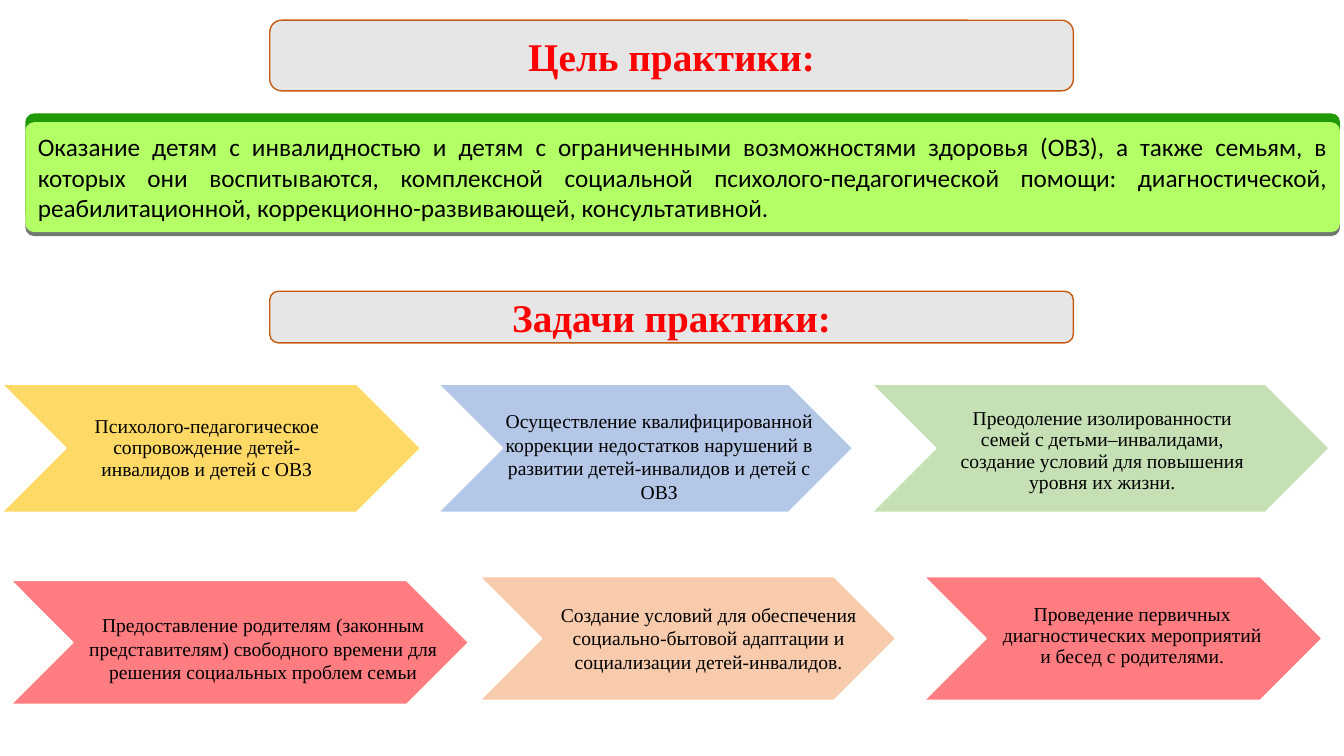
from pptx import Presentation
from pptx.dml.color import RGBColor
from pptx.enum.shapes import MSO_SHAPE as Shape
from pptx.enum.text import MSO_ANCHOR as Anchor, PP_ALIGN as Align
from pptx.util import Cm, Pt

WHITE = RGBColor(0xFF, 0xFF, 0xFF)
BLACK = RGBColor(0x00, 0x00, 0x00)
RED = RGBColor(0xFF, 0x00, 0x00)
GREY = RGBColor(0xE7, 0xE6, 0xE6)
BROWN = RGBColor(0xC5, 0x5A, 0x11)
SHADE = RGBColor(0x70, 0x78, 0x70)
DARK_GREEN = RGBColor(0x1F, 0x9A, 0x06)
LIME = RGBColor(0xB3, 0xFF, 0x66)
YELLOW = RGBColor(0xFF, 0xD9, 0x66)
BLUE = RGBColor(0xB4, 0xC7, 0xE7)
GREEN = RGBColor(0xC5, 0xE0, 0xB4)
CORAL = RGBColor(0xFF, 0x7C, 0x80)
PEACH = RGBColor(0xF8, 0xCB, 0xAD)

SERIF = "Times New Roman"
BANNER_FONT = {"name": SERIF, "size": Pt(28), "bold": True}
GOAL_FONT = {"name": "Calibri", "size": Pt(18)}
TASK_FONT = {"name": SERIF, "size": Pt(14)}
TASK_INSETS = {"margin_left": Cm(0.13), "margin_top": Cm(0.05),
               "margin_right": Cm(0.05), "margin_bottom": Cm(0.05)}

prs = Presentation()
prs.slide_width, prs.slide_height = Cm(33.87), Cm(19.05)
slide = prs.slides.add_slide(prs.slide_layouts[6])


def add_block(kind, place, fill, outline=None):
    """Add a flat preset shape; place is left, top, width, height in cm."""
    block = slide.shapes.add_shape(kind, *map(Cm, place))
    block.shadow.inherit = False
    block.fill.solid()
    block.fill.fore_color.rgb = fill
    if outline is None:
        block.line.fill.background()
    else:
        block.line.color.rgb = outline
        block.line.width = Pt(1)
    return block


def write(holder, text, font, color=BLACK, align=Align.CENTER, spacing=1.0):
    frame = holder.text_frame
    frame.word_wrap = True
    frame.vertical_anchor = Anchor.MIDDLE
    paragraph = frame.paragraphs[0]
    paragraph.alignment = align
    paragraph.line_spacing = spacing
    run = paragraph.add_run()
    run.text = text
    for key, value in font.items():
        setattr(run.font, key, value)
    run.font.color.rgb = color


# Tasks: chevron place, fill, label place, line spacing, wording
tasks = [
    ((0.05, 9.68, 10.55, 3.23), YELLOW, (1.9, 10.39, 6.55, 1.83), 0.9,
     "Психолого-педагогическое сопровождение детей-инвалидов и детей с ОВЗ"),
    ((11.05, 9.68, 10.44, 3.23), BLUE, (12.42, 10.29, 8.31, 2.41), 1.0,
     "Осуществление квалифицированной коррекции недостатков нарушений "
     "в развитии детей-инвалидов и детей с ОВЗ"),
    ((21.97, 9.68, 11.53, 3.23), GREEN, (24.03, 10.29, 7.42, 2.16), 0.9,
     "Преодоление изолированности семей с детьми–инвалидами, "
     "создание условий для повышения уровня их жизни."),
    ((0.28, 14.63, 11.53, 3.12), CORAL, (2.01, 15.19, 9.17, 2.29), 1.0,
     "Предоставление родителям (законным представителям) свободного "
     "времени для решения социальных проблем семьи"),
    ((12.09, 14.53, 10.49, 3.12), PEACH, (13.72, 14.99, 8.2, 2.18), 1.0,
     "Создание условий для обеспечения социально-бытовой адаптации "
     "и социализации детей-инвалидов."),
    ((23.29, 14.53, 10.03, 3.12), CORAL, (24.99, 15.21, 7.01, 1.63), 0.9,
     "Проведение первичных диагностических мероприятий "
     "и бесед с родителями."),
]
for chevron_place, fill, label_place, spacing, wording in tasks:
    add_block(Shape.CHEVRON, chevron_place, fill, WHITE)
    label = slide.shapes.add_textbox(*map(Cm, label_place))
    write(label, wording, TASK_FONT, spacing=spacing)
    for side, inset in TASK_INSETS.items():
        setattr(label.text_frame, side, inset)

# Goal panel: shade below, dark edge above, lime face in front
for top, height, fill in [(3.2, 2.75, SHADE), (2.86, 2.7, DARK_GREEN),
                          (3.08, 2.77, LIME)]:
    goal = add_block(Shape.ROUNDED_RECTANGLE, (0.64, top, 33.13, height), fill)
    goal.adjustments[0] = 0.08
write(goal,
      "Оказание детям с инвалидностью и детям с ограниченными возможностями "
      "здоровья (ОВЗ), а также семьям, в которых они воспитываются, "
      "комплексной социальной психолого-педагогической помощи: "
      "диагностической, реабилитационной, коррекционно-развивающей, "
      "консультативной.", GOAL_FONT, align=Align.JUSTIFY)

for top, height, heading in [(0.51, 1.78, "Цель практики:"),
                             (7.34, 1.3, "Задачи практики:")]:
    banner = add_block(Shape.ROUNDED_RECTANGLE, (6.8, top, 20.25, height),
                       GREY, BROWN)
    write(banner, heading, BANNER_FONT, RED)

prs.save("out.pptx")
